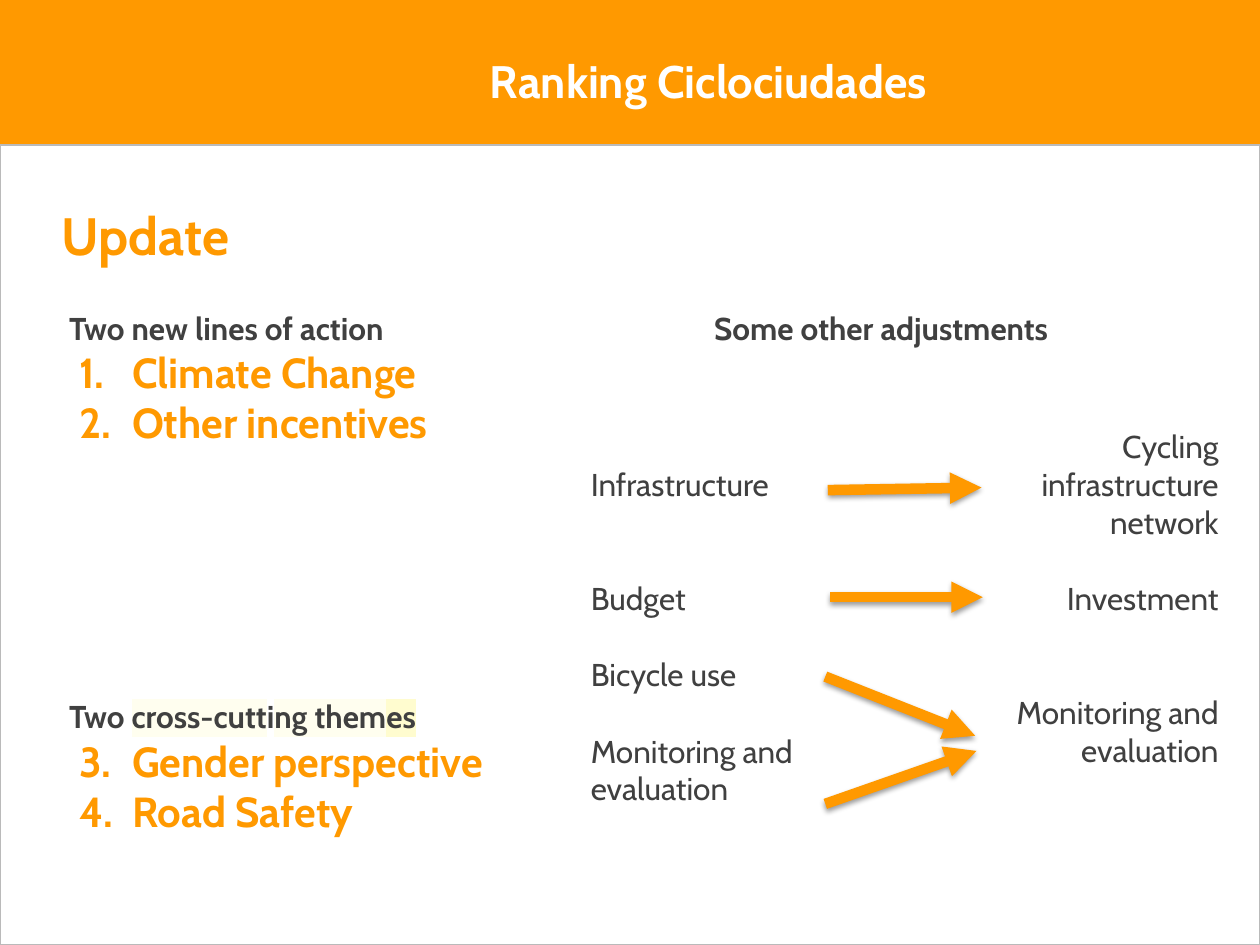
from lxml.etree import SubElement
from pptx import Presentation
from pptx.dml.color import RGBColor
from pptx.enum.shapes import MSO_CONNECTOR, MSO_SHAPE
from pptx.enum.text import PP_ALIGN
from pptx.oxml import parse_xml
from pptx.oxml.ns import nsdecls, qn
from pptx.util import Inches, Pt

HUES = {"orange": "FF9900", "white": "FFFFFF", "gray": "404040", "edge": "BABABA",
        "cream": "FFFEEF", "lemon": "FFFCCF", "black": "000000"}
FONT = "Cabin"
LINE = 21.9


def hue(name):
    """Return the named colour."""
    return RGBColor.from_string(HUES[name])


def add_box(slide, x, y, w, h):
    """Add a wrapping text box and return its frame."""
    frame = slide.shapes.add_textbox(Inches(x), Inches(y), Inches(w), Inches(h)).text_frame
    frame.word_wrap = True
    return frame


def add_par(frame, first, gap=0, align=PP_ALIGN.LEFT):
    """Return the first or a new paragraph with its space before."""
    par = frame.paragraphs[0] if first else frame.add_paragraph()
    par.alignment = align
    if gap:
        par.space_before = Pt(gap)
    return par


def add_run(par, text, size, color, bold=False, mark=None):
    """Add one styled run, highlighted when a mark colour is given."""
    run = par.add_run()
    run.text = text
    font = run.font
    font.name, font.size, font.bold = FONT, Pt(size), bold
    font.color.rgb = hue(color)
    if mark:
        fill = run._r.rPr.find(qn("a:solidFill"))
        fill.addnext(parse_xml(f'<a:highlight {nsdecls("a")}>'
                               f'<a:srgbClr val="{HUES[mark]}"/></a:highlight>'))


def add_head(slide, text, x, y, w, h, size, color):
    """Add a bold one-line heading."""
    add_run(add_par(add_box(slide, x, y, w, h), True), text, size, color, True)


def add_rect(slide, x, y, w, h, fill, edge=None):
    """Add a flat rectangle."""
    rect = slide.shapes.add_shape(MSO_SHAPE.RECTANGLE, Inches(x), Inches(y), Inches(w), Inches(h))
    rect.shadow.inherit = False
    rect.fill.solid()
    rect.fill.fore_color.rgb = hue(fill)
    if edge:
        rect.line.color.rgb = hue(edge)
        rect.line.width = Pt(1)
    else:
        rect.line.fill.background()


def add_item(frame, text, start):
    """Add a numbered orange item to a list that begins at start."""
    par = add_par(frame, False)
    props = par._p.get_or_add_pPr()
    props.set("marL", str(Inches(0.5)))
    props.set("indent", str(Inches(-0.42)))
    SubElement(SubElement(props, qn("a:buClr")), qn("a:srgbClr"), val=HUES["orange"])
    SubElement(props, qn("a:buFont"), typeface=FONT)
    SubElement(props, qn("a:buAutoNum"), type="arabicPeriod", startAt=str(start))
    add_run(par, text, 24, "orange", True)


def add_lists(slide, x, y, w, h):
    """Add the two headed lists on the left."""
    frame = add_box(slide, x, y, w, h)
    groups = [
        (1, 0, [("Two new lines of action", None)], ["Climate Change", "Other incentives"]),
        (3, 143, [("Two ", None), ("cross-cutt", "cream"), ("i", "white"),
                  ("ng them", "cream"), ("es", "lemon")],
         ["Gender perspective", "Road Safety"]),
    ]
    for start, gap, head, items in groups:
        par = add_par(frame, start == 1, gap)
        for text, mark in head:
            add_run(par, text, 18, "gray", True, mark)
        for item in items:
            add_item(frame, item, start)


def add_terms(slide, x, y, w, h, terms, align):
    """Add a column of terms, each with its count of free lines above."""
    frame = add_box(slide, x, y, w, h)
    for i, (text, skip) in enumerate(terms):
        add_run(add_par(frame, i == 0, skip * LINE, align), text, 18, "gray")


def add_arrow(slide, x1, y1, x2, y2):
    """Add a thick orange arrow with a soft shadow."""
    arrow = slide.shapes.add_connector(MSO_CONNECTOR.STRAIGHT, Inches(x1), Inches(y1),
                                       Inches(x2), Inches(y2))
    arrow.line.color.rgb = hue("orange")
    arrow.line.width = Pt(6)
    props = arrow._element.spPr
    SubElement(props.find(qn("a:ln")), qn("a:tailEnd"), type="triangle")
    glow = SubElement(SubElement(props, qn("a:effectLst")), qn("a:outerShdw"),
                      blurRad=str(Pt(3.1)), dist=str(Pt(1.6)), dir="5400000", rotWithShape="0")
    tint = SubElement(glow, qn("a:srgbClr"), val=HUES["black"])
    SubElement(tint, qn("a:alpha"), val="38000")


def add_flow(slide, x, y):
    """Add the old terms, the new terms and the arrows between them."""
    old = [("Infrastructure", 0), ("Budget", 2), ("Bicycle use", 1),
           ("Monitoring and evaluation", 1)]
    new = [("Cycling infrastructure network", 0), ("Investment", 1),
           ("Monitoring and evaluation", 2)]
    add_head(slide, "Some other adjustments", x + 0.98, y, 4.14, 0.54, 18, "gray")
    add_terms(slide, x, y + 1.24, 1.98, 3.8, old, PP_ALIGN.LEFT)
    add_terms(slide, x + 2.95, y + 0.94, 2.23, 4.1, new, PP_ALIGN.RIGHT)
    for x1, y1, x2, y2 in [(1.98, 1.49, 3.2, 1.47), (2, 2.34, 3.21, 2.34),
                           (1.96, 2.97, 3.15, 3.44), (1.96, 3.98, 3.16, 3.56)]:
        add_arrow(slide, x + x1, y + y1, x + x2, y + y2)


def main():
    """Build and save the slide."""
    deck = Presentation()
    deck.slide_width, deck.slide_height = Inches(10), Inches(7.5)
    slide = deck.slides.add_slide(deck.slide_layouts[6])
    add_rect(slide, 0, 0, 10, 7.5, "orange")
    add_rect(slide, 0, 1.15, 10, 6.35, "white", "edge")
    add_head(slide, "Update", 0.39, 1.56, 5.65, 0.44, 30, "orange")
    add_flow(slide, 4.59, 2.4)
    add_lists(slide, 0.45, 2.4, 4.14, 4.95)
    add_head(slide, "Ranking Ciclociudades", 3.79, 0.37, 4.61, 0.54, 26, "white")
    deck.save("out.pptx")


if __name__ == "__main__":
    main()
